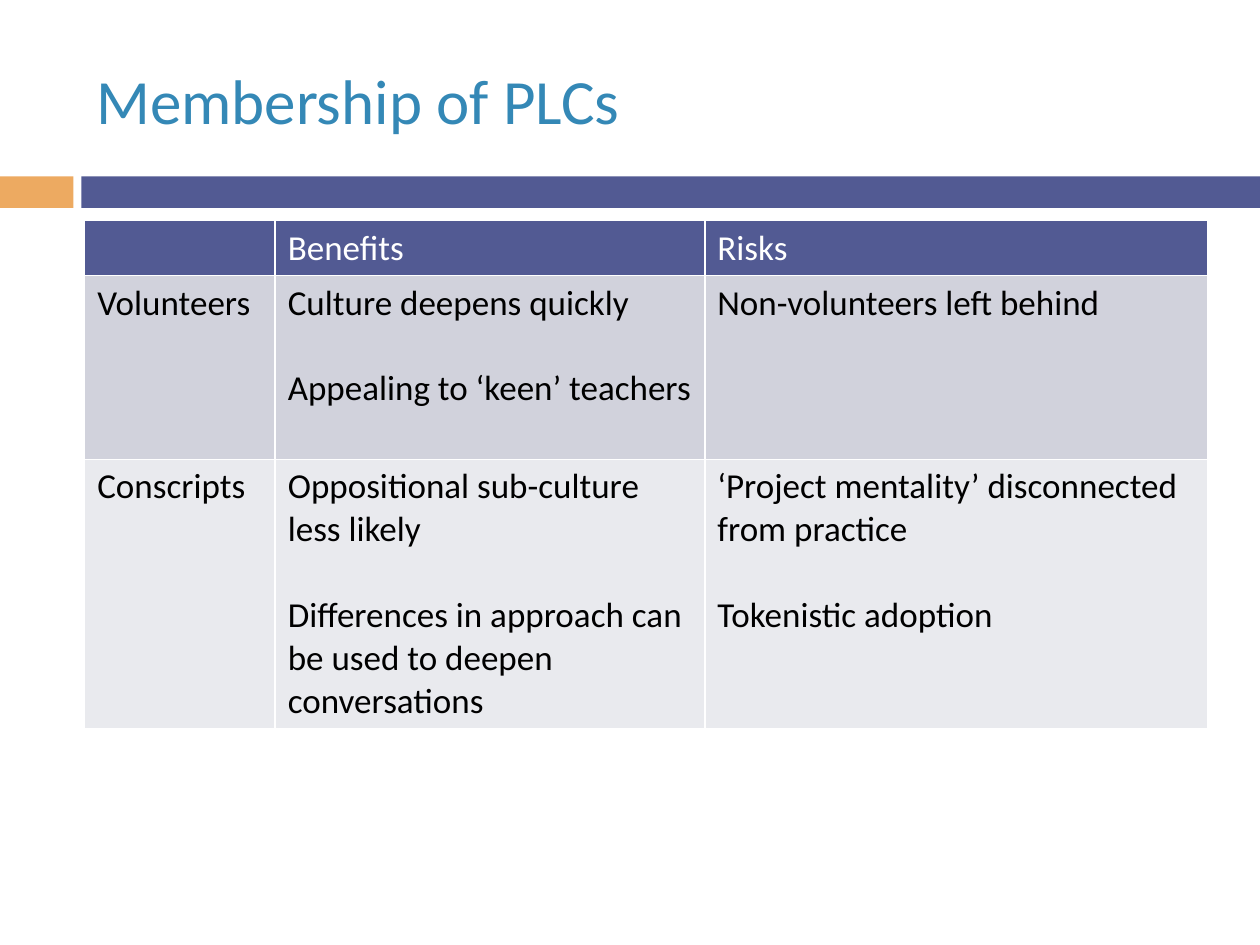
from dataclasses import dataclass

from lxml import etree
from pptx import Presentation
from pptx.dml.color import RGBColor
from pptx.enum.shapes import MSO_SHAPE
from pptx.enum.text import MSO_ANCHOR
from pptx.oxml.ns import qn
from pptx.util import Pt

RECTANGLE = MSO_SHAPE.RECTANGLE
MIDDLE = MSO_ANCHOR.MIDDLE


@dataclass(frozen=True)
class Theme:
    font: str = "Calibri"
    title_size: float = 36
    table_size: float = 20
    paragraph_gap: float = 24.4
    border_width: float = 1
    title: str = "3488B6"
    accent: str = "EDAA61"
    primary: str = "525A93"
    band_dark: str = "D1D2DC"
    band_light: str = "E9EAEE"
    light_text: str = "FFFFFF"
    dark_text: str = "000000"
    border: str = "FFFFFF"


THEME = Theme()

COLUMN_WIDTHS = (108.9, 245.5, 287.6)
ROW_HEIGHTS = (31.4, 105.1, 153.7)
ROW_STYLES = (
    (THEME.primary, THEME.light_text),
    (THEME.band_dark, THEME.dark_text),
    (THEME.band_light, THEME.dark_text),
)
MEMBERSHIP = (
    ((), ("Benefits",), ("Risks",)),
    (
        ("Volunteers",),
        ("Culture deepens quickly", "Appealing to ‘keen’ teachers"),
        ("Non-volunteers left behind",),
    ),
    (
        ("Conscripts",),
        (
            "Oppositional sub-culture less likely",
            "Differences in approach can be used to deepen conversations",
        ),
        ("‘Project mentality’ disconnected from practice", "Tokenistic adoption"),
    ),
)


def add_bar(page, left, width, color):
    bar = page.shapes.add_shape(RECTANGLE, Pt(left), Pt(100.8), Pt(width), Pt(18))
    bar.shadow.inherit = False
    bar.fill.solid()
    bar.fill.fore_color.rgb = RGBColor.from_string(color)
    bar.line.fill.background()


def add_span(para, text, size, color):
    span = para.add_run()
    span.text = text
    span.font.name = THEME.font
    span.font.size = Pt(size)
    span.font.color.rgb = RGBColor.from_string(color)


def add_title(page, text):
    box = page.shapes.add_textbox(Pt(48), Pt(18), Pt(642), Pt(78))
    frame = box.text_frame
    frame.word_wrap = True
    frame.vertical_anchor = MIDDLE
    add_span(frame.paragraphs[0], text, THEME.title_size, THEME.title)


def set_borders(cell):
    """Draw all four sides; call before filling, as borders come first in the XML."""
    properties = cell._tc.get_or_add_tcPr()
    for side in ("a:lnL", "a:lnR", "a:lnT", "a:lnB"):
        line = etree.SubElement(properties, qn(side), w=str(Pt(THEME.border_width)))
        fill = etree.SubElement(line, qn("a:solidFill"))
        etree.SubElement(fill, qn("a:srgbClr"), val=THEME.border)


def fill_cell(cell, texts, fill_color, text_color):
    set_borders(cell)
    cell.fill.solid()
    cell.fill.fore_color.rgb = RGBColor.from_string(fill_color)
    frame = cell.text_frame
    for index, text in enumerate(texts):
        para = frame.add_paragraph() if index else frame.paragraphs[0]
        if index:
            para.space_before = Pt(THEME.paragraph_gap)
        add_span(para, text, THEME.table_size, text_color)


def add_membership_table(page):
    table = page.shapes.add_table(
        len(ROW_HEIGHTS), len(COLUMN_WIDTHS), Pt(48.4), Pt(126),
        Pt(sum(COLUMN_WIDTHS)), Pt(sum(ROW_HEIGHTS)),
    ).table
    for column, width in zip(table.columns, COLUMN_WIDTHS):
        column.width = Pt(width)
    for row, height, style, contents in zip(
        table.rows, ROW_HEIGHTS, ROW_STYLES, MEMBERSHIP
    ):
        row.height = Pt(height)
        for cell, texts in zip(row.cells, contents):
            fill_cell(cell, texts, *style)


def main():
    deck = Presentation()
    deck.slide_width, deck.slide_height = Pt(720), Pt(540)
    page = deck.slides.add_slide(deck.slide_layouts[6])
    add_bar(page, 0, 42, THEME.accent)
    add_bar(page, 46.5, 673.5, THEME.primary)
    add_title(page, "Membership of PLCs")
    add_membership_table(page)
    deck.save("out.pptx")


if __name__ == "__main__":
    main()
